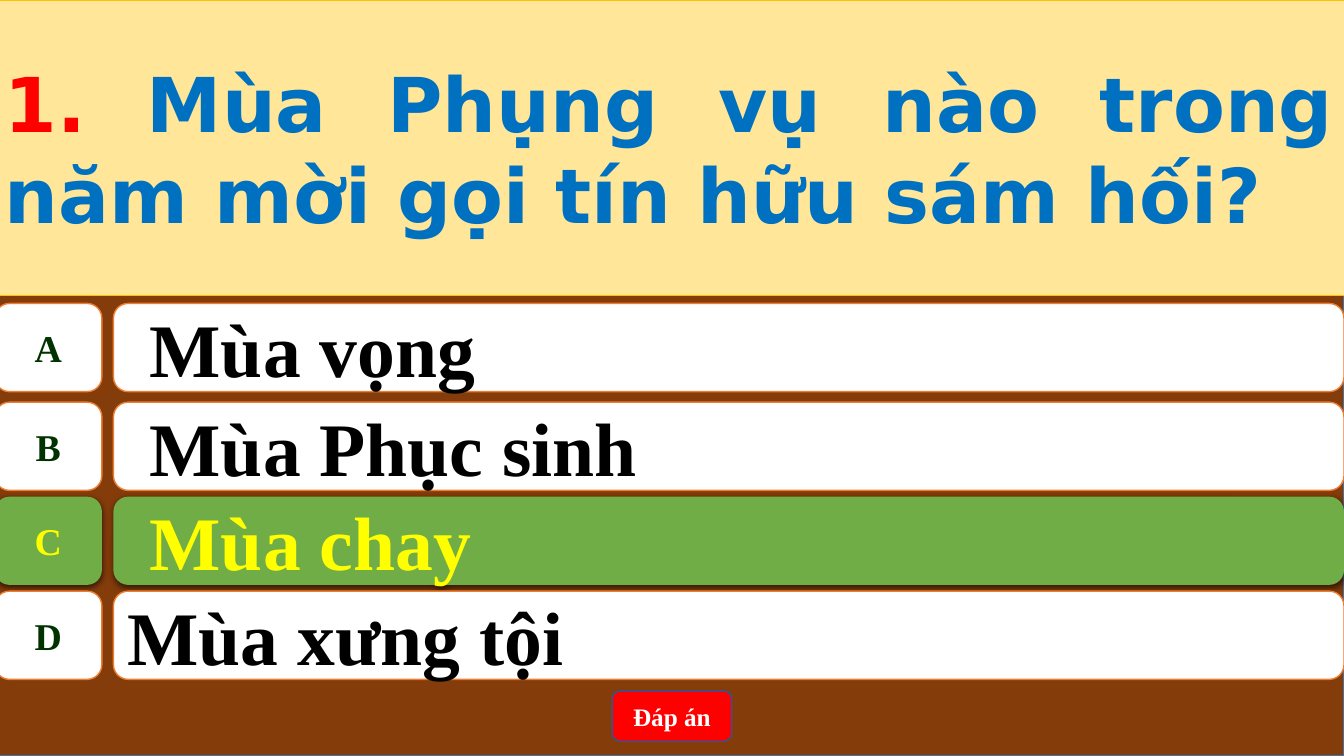
from lxml import etree
from pptx import Presentation
from pptx import util as u
from pptx.dml.color import RGBColor
from pptx.enum import shapes, text
from pptx.oxml.ns import qn

PX = 9525  # EMU in one px, 1280 x 720 px page
BROWN = RGBColor(0x84, 0x3C, 0x0B)
FRAME = RGBColor(0x43, 0x73, 0x9E)
CREAM = RGBColor(0xFF, 0xE6, 0x99)
GOLD = RGBColor(0xFF, 0xC0, 0x00)
ORANGE = RGBColor(0xED, 0x7D, 0x31)
GREEN = RGBColor(0x70, 0xAD, 0x47)
DARK_GREEN = RGBColor(0x00, 0x33, 0x00)
YELLOW = RGBColor(0xFF, 0xFF, 0x00)
RED = RGBColor(0xFF, 0x00, 0x00)
BLUE = RGBColor(0x00, 0x70, 0xC0)
NAVY = RGBColor(0x32, 0x54, 0x91)
WHITE = RGBColor(0xFF, 0xFF, 0xFF)
BLACK = RGBColor(0x00, 0x00, 0x00)

SERIF = "Times New Roman"
SANS = "DejaVu Sans"
KIND = shapes.MSO_SHAPE
ALIGN = text.PP_ALIGN
LEFT = -5
WIDTH = 1285


def add_box(page, kind, box, fill, line=None, weight=1):
    shape = page.shapes.add_shape(kind, *(u.Emu(side * PX) for side in box))
    shape.shadow.inherit = False
    shape.fill.solid()
    shape.fill.fore_color.rgb = fill
    if line is None:
        shape.line.fill.background()
    else:
        shape.line.color.rgb = line
        shape.line.width = u.Pt(weight)
    return shape


def write(shape, spans, size, font=SERIF, align=ALIGN.LEFT, wrap=True, indent=None):
    """Fill the shape with one bold paragraph of (wording, colour) spans."""
    frame = shape.text_frame
    frame.word_wrap = wrap
    frame.vertical_anchor = text.MSO_ANCHOR.MIDDLE
    para = frame.paragraphs[0]
    para.alignment = align
    if indent:
        margin, first_line = indent
        props = para._p.get_or_add_pPr()
        props.set("marL", str(margin * PX))
        props.set("indent", str(first_line * PX))
    for wording, colour in spans:
        span = para.add_run()
        span.text = wording
        span.font.name = font
        span.font.size = u.Pt(size)
        span.font.bold = True
        span.font.color.rgb = colour


def add_shadow(shape):
    effects = shape._element.spPr.find(qn("a:effectLst"))
    outer = etree.SubElement(effects, qn("a:outerShdw"), blurRad=str(u.Pt(4.5)),
                             dist=str(u.Pt(1.5)), dir="5400000",
                             algn="ctr", rotWithShape="0")
    colour = etree.SubElement(outer, qn("a:srgbClr"), val="000000")
    etree.SubElement(colour, qn("a:alpha"), val="63000")


def add_question(page, box, number, question):
    panel = add_box(page, KIND.RECTANGLE, box, CREAM, GOLD, 0.5)
    write(panel, [(number, RED), (question, BLUE)], 54, font=SANS, align=ALIGN.JUSTIFY)


def add_answer(page, box, letter, answer, correct=False, indent=(48, -27)):
    left, top, width, height = box
    label_width, answer_offset = 102, 113
    fill, line = (GREEN, None) if correct else (WHITE, ORANGE)

    # Answer bar
    bar = add_box(page, KIND.ROUNDED_RECTANGLE,
                  (left + answer_offset, top, width - answer_offset, height), fill, line)
    write(bar, [(answer, YELLOW if correct else BLACK)], 54, indent=indent)

    # Letter label
    label = add_box(page, KIND.FLOWCHART_ALTERNATE_PROCESS,
                    (left, top, label_width, height), fill, line)
    write(label, [(letter, YELLOW if correct else DARK_GREEN)], 27,
          align=ALIGN.CENTER, wrap=False)

    if correct:
        for shape in (bar, label):
            add_shadow(shape)


def add_button(page, box, caption):
    button = add_box(page, KIND.ROUNDED_RECTANGLE, box, RED, NAVY)
    write(button, [(caption, WHITE)], 18, align=ALIGN.CENTER)


def build_quiz(page):
    # Backdrop
    add_box(page, KIND.RECTANGLE, (LEFT, 0, WIDTH, 720), BROWN, FRAME)

    add_question(page, (LEFT, 0, WIDTH, 281), "1. ",
                 "Mùa Phụng vụ nào trong năm mời gọi tín hữu sám hối?")

    # Answers
    answers = [
        (289, "A", "Mùa vọng", {}),
        (383, "B", "Mùa Phục sinh", {}),
        (473, "C", "Mùa chay", {"correct": True}),
        (563, "D", "Mùa xưng tội", {"indent": None}),
    ]
    for top, letter, answer, options in answers:
        add_answer(page, (LEFT, top, WIDTH, 84), letter, answer, **options)

    add_button(page, (583, 658, 114, 48), "Đáp án")


def main():
    deck = Presentation()
    deck.slide_width = u.Emu(1280 * PX)
    deck.slide_height = u.Emu(720 * PX)
    build_quiz(deck.slides.add_slide(deck.slide_layouts[6]))
    deck.save("out.pptx")


if __name__ == "__main__":
    main()
